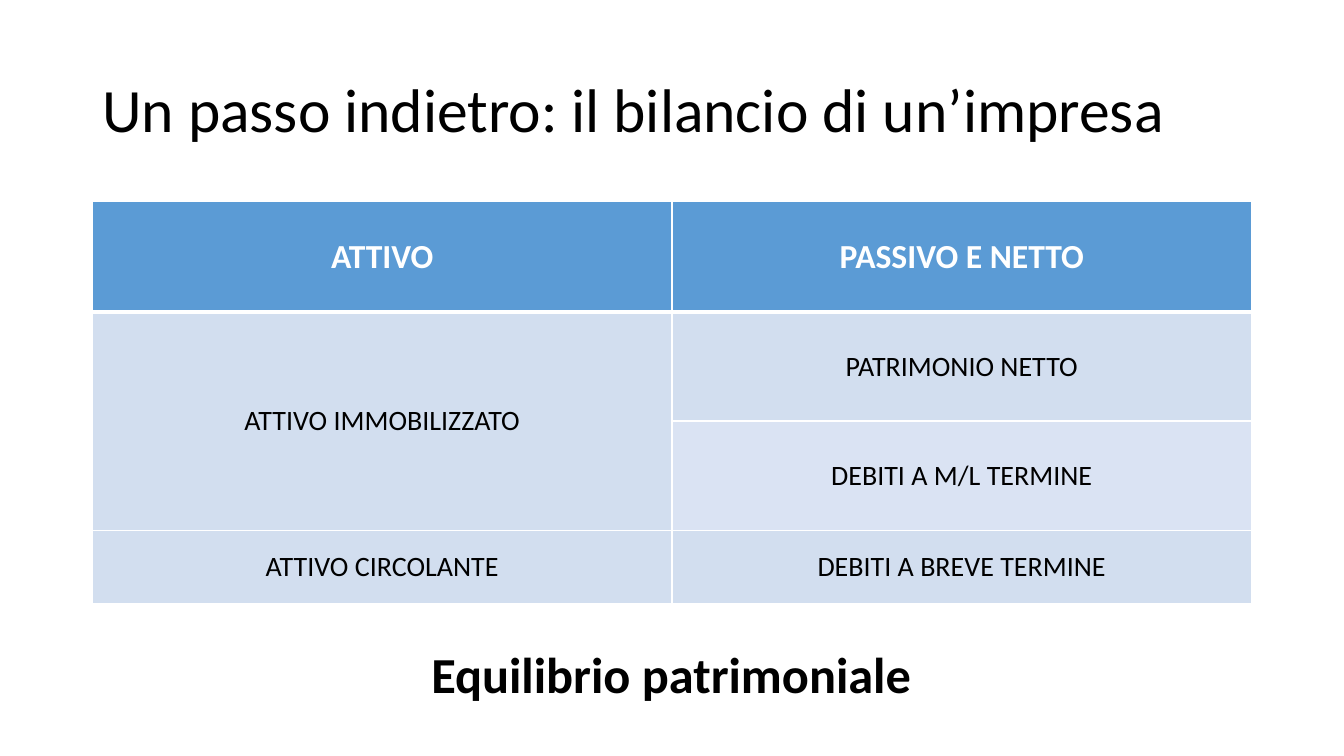
from pptx import Presentation
from pptx.dml.color import RGBColor
from pptx.enum.text import MSO_ANCHOR, PP_ALIGN
from pptx.oxml import parse_xml
from pptx.oxml.ns import nsdecls
from pptx.util import Emu, Pt

MIDDLE, TOP = MSO_ANCHOR.MIDDLE, MSO_ANCHOR.TOP
LEFT, CENTER = PP_ALIGN.LEFT, PP_ALIGN.CENTER


def px(n):
    return Emu(n * 9525)


def rgb(value):
    return RGBColor.from_string(value)


class Deck:
    font = "Calibri"
    black, white = "000000", "FFFFFF"
    header, band, light = "5B9BD5", "D2DEEF", "DAE3F3"

    def __init__(self, prs):
        self.s = prs.slides.add_slide(prs.slide_layouts[6])

    def paragraph(self, tf, text, size, color, bold=False, align=CENTER):
        p = tf.paragraphs[0]
        p.text = text
        p.alignment = align
        p.font.name, p.font.size, p.font.bold = self.font, Pt(size), bold
        p.font.color.rgb = rgb(color)
        return p

    def text(self, x, y, w, h, text, size, bold=False, align=CENTER, anchor=TOP):
        tf = self.s.shapes.add_textbox(px(x), px(y), px(w), px(h)).text_frame
        tf.word_wrap = True
        tf.vertical_anchor = anchor
        return self.paragraph(tf, text, size, self.black, bold, align)

    def table(self, x, y, widths, heights):
        frame = self.s.shapes.add_table(len(heights), len(widths), px(x), px(y),
                                        px(sum(widths)), px(sum(heights)))
        table = frame.table
        for column, width in zip(table.columns, widths):
            column.width = px(width)
        for row, height in zip(table.rows, heights):
            row.height = px(height)
        return table

    def borders(self, cell, top=1, bottom=1):
        tcPr = cell._tc.get_or_add_tcPr()
        sides = {"L": 1, "R": 1, "T": top, "B": bottom}
        for i, (side, width) in enumerate(sides.items()):
            tcPr.insert(i, parse_xml(
                f'<a:ln{side} {nsdecls("a")} w="{Pt(width)}"><a:solidFill>'
                f'<a:srgbClr val="{self.white}"/></a:solidFill></a:ln{side}>'))

    def cell(self, cell, text, fill, size, color, bold=False, top=1, bottom=1):
        cell.fill.solid()
        cell.fill.fore_color.rgb = rgb(fill)
        cell.vertical_anchor = MIDDLE
        self.paragraph(cell.text_frame, text, size, color, bold)
        self.borders(cell, top, bottom)


def main():
    prs = Presentation()
    prs.slide_width, prs.slide_height = px(1280), px(720)
    d = Deck(prs)

    # Title
    p = d.text(88, 38, 1104, 139, "Un passo indietro: il bilancio di un’impresa",
               44, align=LEFT, anchor=MIDDLE)
    p.line_spacing = 0.9

    # Balance sheet
    rows = [
        ("ATTIVO", "PASSIVO E NETTO"),
        ("ATTIVO IMMOBILIZZATO", "PATRIMONIO NETTO"),
        ("", "DEBITI A M/L TERMINE"),
        ("ATTIVO CIRCOLANTE", "DEBITI A BREVE TERMINE"),
    ]
    table = d.table(88, 192, [552, 552], [105, 104, 104, 70])
    for r, row in enumerate(rows):
        for c, text in enumerate(row):
            cell = table.cell(r, c)
            if r == 0:
                d.cell(cell, text, d.header, 24, d.white, bold=True, bottom=3)
            else:
                fill = d.light if r == 2 else d.band
                d.cell(cell, text, fill, 20, d.black, top=3 if r == 1 else 1)
    table.cell(1, 0).merge(table.cell(2, 0))

    # Closing line
    d.text(325, 608, 629, 68, "Equilibrio patrimoniale", 36, bold=True)

    prs.save("out.pptx")


if __name__ == "__main__":
    main()
